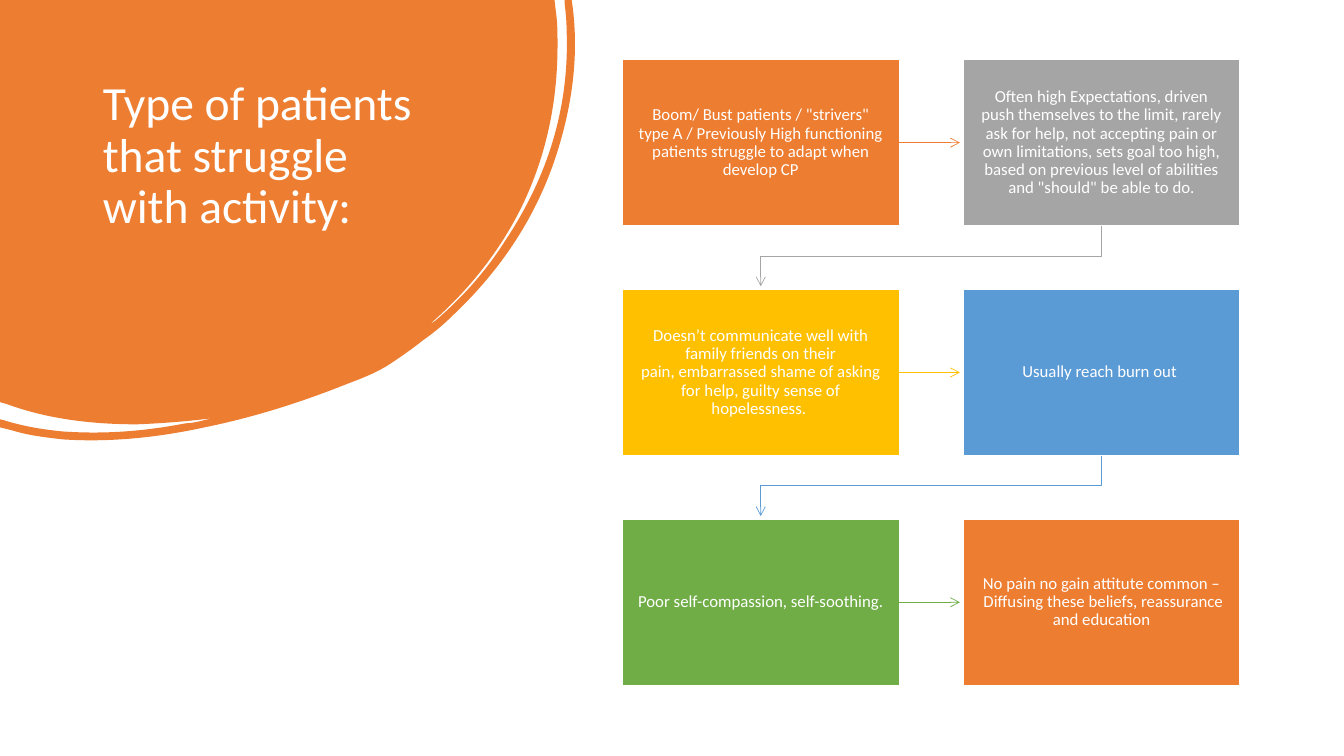
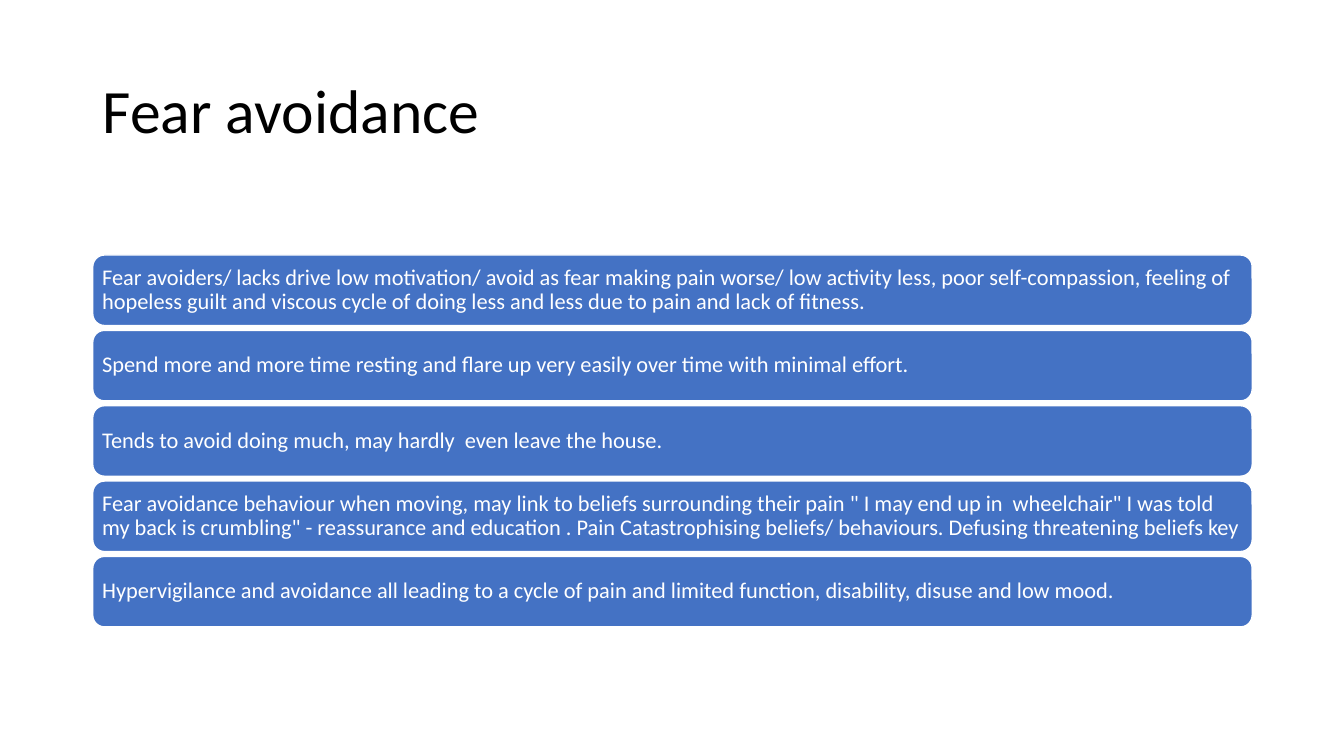
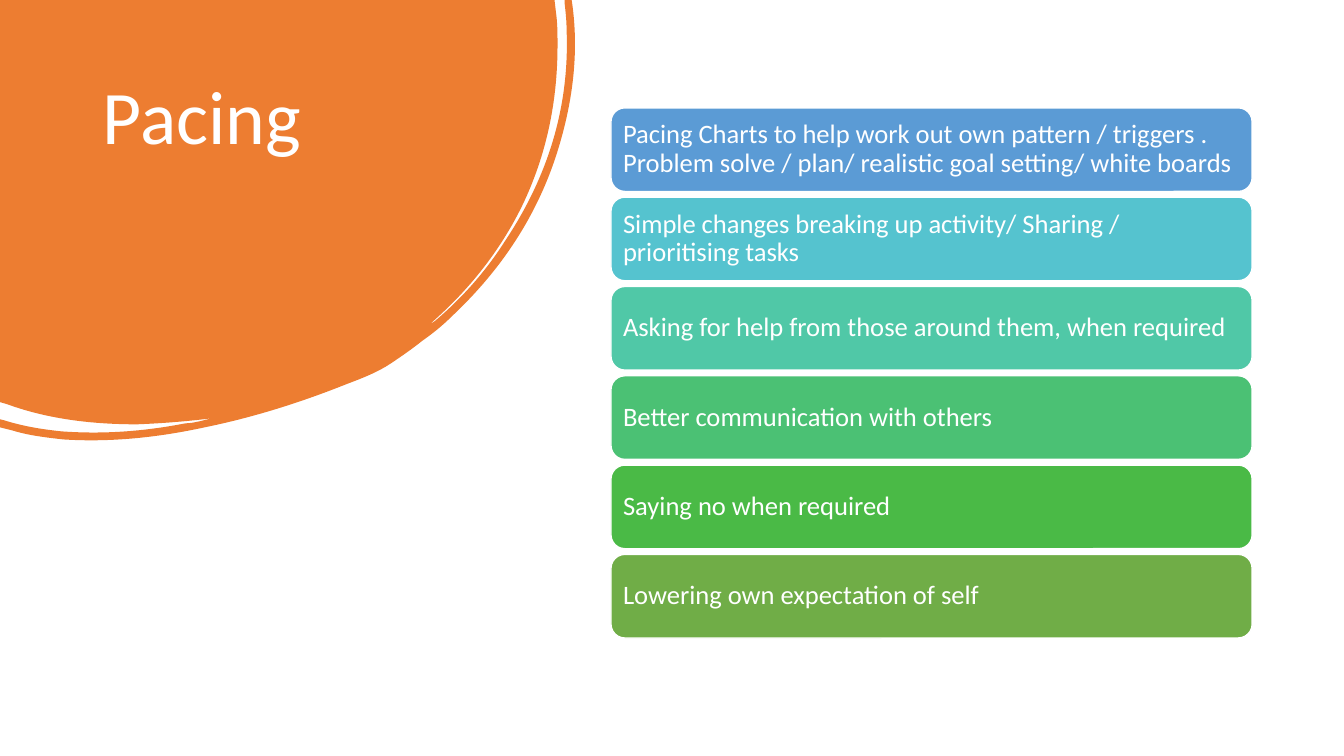
import pptx
import pptx.dml.color
import pptx.enum.shapes
import pptx.enum.text
import pptx.oxml.ns
import pptx.util
from lxml import etree

Inches = pptx.util.Inches
Pt = pptx.util.Pt
RGBColor = pptx.dml.color.RGBColor
MSO_SHAPE = pptx.enum.shapes.MSO_SHAPE
MSO_CONNECTOR = pptx.enum.shapes.MSO_CONNECTOR
MSO_ANCHOR = pptx.enum.text.MSO_ANCHOR
PP_ALIGN = pptx.enum.text.PP_ALIGN
qn = pptx.oxml.ns.qn

FONT = "Calibri"
NBSP = chr(160)
WHITE = RGBColor(0xFF, 0xFF, 0xFF)
BLACK = RGBColor(0x00, 0x00, 0x00)
ORANGE = RGBColor(0xED, 0x7D, 0x31)
GREY = RGBColor(0xA5, 0xA5, 0xA5)
GOLD = RGBColor(0xFF, 0xC0, 0x00)
BLUE = RGBColor(0x5B, 0x9B, 0xD5)
GREEN = RGBColor(0x70, 0xAD, 0x47)
ROYAL = RGBColor(0x44, 0x72, 0xC4)
TURQUOISE = RGBColor(0x55, 0xC3, 0xCF)
TEAL = RGBColor(0x50, 0xC8, 0xA7)
EMERALD = RGBColor(0x4B, 0xC1, 0x74)
LEAF = RGBColor(0x4A, 0xBA, 0x46)

# Outline of the corner swoosh in inches: two numbers are a line's end,
# six numbers are a Bezier curve's two handles and end.
SWOOSH = [
    (5.5, 0), (5.52, 0.17),
    (5.53, 0.26, 5.53, 0.36, 5.53, 0.45), (5.53, 1.01, 5.42, 1.54, 5.18, 2.04),
    (4.96, 2.49, 4.65, 2.88, 4.27, 3.21), (4.29, 3.21, 4.3, 3.19, 4.32, 3.18),
    (4.59, 2.95, 4.82, 2.69, 5.01, 2.39), (5.43, 1.76, 5.65, 1.07, 5.62, 0.3),
    (5.62, 0.21, 5.61, 0.12, 5.6, 0.03),
    (5.6, 0), (5.67, 0), (5.68, 0.07),
    (5.74, 0.54, 5.68, 1.02, 5.53, 1.5), (5.33, 2.14, 4.97, 2.68, 4.48, 3.14),
    (4.39, 3.23, 4.29, 3.31, 4.19, 3.38), (4.09, 3.46, 3.99, 3.53, 3.87, 3.61),
    (3.75, 3.69, 3.6, 3.75, 3.44, 3.81), (2.99, 3.99, 2.52, 4.14, 2.03, 4.24),
    (1.57, 4.34, 1.1, 4.39, 0.63, 4.36), (0.45, 4.34, 0.28, 4.32, 0.12, 4.27),
    (0, 4.24), (0, 4.16), (0.04, 4.17),
    (0.23, 4.23, 0.42, 4.26, 0.61, 4.28), (1.03, 4.31, 1.43, 4.28, 1.84, 4.2),
    (1.89, 4.2, 1.93, 4.19, 1.98, 4.18), (2.02, 4.17, 2.06, 4.16, 2.1, 4.15),
    (1.86, 4.18, 1.61, 4.2, 1.36, 4.21), (0.92, 4.21, 0.48, 4.16, 0.07, 4.01),
    (0, 3.99),
]
SWOOSH_SIZE = (5.71, 4.37)

TITLE_BOX = (0.92, 0.4, 11.5, 1.45)
SWOOSH_TITLE_BOX = (0.92, 0.74, 3.52, 2.22)

STRUGGLES = [
    ("Boom/ Bust patients / \"strivers\" type A / Previously High functioning "
     "patients struggle to adapt when develop CP", ORANGE),
    ("Often high Expectations, driven push themselves to the limit, rarely ask "
     "for help, not accepting pain or own limitations, sets goal too high, based "
     "on previous level of abilities and \"should\" be able to do.", GREY),
    (f"Doesn’t communicate well with family friends on their pain,{NBSP}embarrassed "
     f"shame of asking for help, guilty sense of hopelessness.{NBSP}", GOLD),
    (f"Usually reach burn out{NBSP}", BLUE),
    ("Poor self-compassion, self-soothing.", GREEN),
    (f"No pain no gain attitute common –{NBSP}Diffusing these beliefs, reassurance "
     "and education", ORANGE),
]
AVOIDANCE = [
    "Fear avoiders/ lacks drive low motivation/ avoid as fear making pain worse/ "
    "low activity less, poor self-compassion, feeling of hopeless guilt and "
    "viscous cycle of doing less and less due to pain and lack of fitness.",
    f"Spend more and more time resting and flare up{NBSP}very easily over time with "
    f"minimal{NBSP}effort.",
    f"Tends to avoid doing much, may hardly{NBSP} even leave the house.",
    "Fear avoidance behaviour when moving, may link to beliefs surrounding their "
    f"pain{NBSP}\" I may end up in{NBSP} wheelchair\" I was told my back "
    f"is{NBSP}crumbling\" - reassurance and education{NBSP}. Pain Catastrophising "
    "beliefs/ behaviours. Defusing threatening beliefs key",
    "Hypervigilance and avoidance all leading to a cycle of pain and "
    f"limited{NBSP}function, disability, disuse and low mood.",
]
PACING = [
    ("Pacing Charts to help work out own pattern / triggers . Problem solve / "
     "plan/ realistic goal setting/ white boards", BLUE),
    ("Simple changes breaking up activity/ Sharing / prioritising tasks", TURQUOISE),
    ("Asking for help from those around them, when required", TEAL),
    (f"Better communication with others{NBSP}", EMERALD),
    ("Saying no when required", LEAF),
    (f"Lowering own expectation of self{NBSP}", GREEN),
]


def set_text(frame, text, size, color, align, anchor):
    frame.text = text
    frame.word_wrap = True
    frame.auto_size = pptx.enum.text.MSO_AUTO_SIZE.NONE
    frame.vertical_anchor = anchor
    paragraph = frame.paragraphs[0]
    paragraph.alignment = align
    paragraph.line_spacing = 0.9
    font = paragraph.runs[0].font
    font.name, font.size, font.color.rgb = FONT, Pt(size), color


def add_panel(slide, preset, box, text, fill, size, align, inset):
    """Filled, white-edged shape with text."""
    panel = slide.shapes.add_shape(preset, *map(Inches, box))
    panel.shadow.inherit = False
    panel.fill.solid()
    panel.fill.fore_color.rgb = fill
    panel.line.color.rgb = WHITE
    panel.line.width = Pt(1)
    frame = panel.text_frame
    frame.margin_left = frame.margin_right = Inches(inset)
    frame.margin_top = frame.margin_bottom = Inches(inset)
    set_text(frame, text, size, WHITE, align, MSO_ANCHOR.MIDDLE)
    return panel


def add_titled_slide(deck, text, size, box=TITLE_BOX, color=BLACK,
                     anchor=MSO_ANCHOR.MIDDLE):
    slide = deck.slides.add_slide(deck.slide_layouts[5])
    title = slide.shapes.title
    title.left, title.top, title.width, title.height = map(Inches, box)
    set_text(title.text_frame, text, size, color, PP_ALIGN.LEFT, anchor)
    return slide


def bend_segments(outline, segments):
    """Turn the straight segments that have handles into Bezier curves."""
    outline.width, outline.height = map(Inches, SWOOSH_SIZE)
    path_element = next(outline.element.iter(qn("a:path")))
    path_element.set("w", str(outline.width))
    path_element.set("h", str(outline.height))
    for line, (*handles, _, _) in zip(path_element.findall(qn("a:lnTo")), segments):
        if handles:
            curve = etree.Element(qn("a:cubicBezTo"))
            for x, y in (handles[:2], handles[2:]):
                etree.SubElement(curve, qn("a:pt"), x=str(Inches(x)), y=str(Inches(y)))
            curve.append(line[0])
            path_element.replace(line, curve)


def add_swoosh_slide(deck, text, size):
    slide = add_titled_slide(deck, text, size, SWOOSH_TITLE_BOX, WHITE, MSO_ANCHOR.TOP)
    builder = slide.shapes.build_freeform(0, 0)
    builder.add_line_segments([(Inches(x), Inches(y)) for *_, x, y in SWOOSH], close=True)
    swoosh = builder.convert_to_shape()
    bend_segments(swoosh, SWOOSH)
    swoosh.shadow.inherit = False
    swoosh.fill.solid()
    swoosh.fill.fore_color.rgb = ORANGE
    swoosh.line.fill.background()
    slide.shapes.title.element.addprevious(swoosh.element)
    return slide


def add_arrow(slide, kind, ends, color):
    arrow = slide.shapes.add_connector(kind, *map(Inches, ends))
    arrow.line.color.rgb = color
    arrow.line.width = Pt(0.5)
    line = arrow.element.spPr.find(qn("a:ln"))
    etree.SubElement(line, qn("a:tailEnd"), type="arrow")
    etree.SubElement(arrow.element.spPr, qn("a:effectLst"))
    return arrow


def add_down_elbow(slide, start, end, color):
    """Elbow that leaves downwards: a sideways one turned by 90 degrees."""
    (x1, y1), (x2, y2) = start, end
    mid_x, mid_y = (x1 + x2) / 2, (y1 + y2) / 2
    half_drop, half_run = (y2 - y1) / 2, (x1 - x2) / 2
    elbow = add_arrow(slide, MSO_CONNECTOR.ELBOW,
                      (mid_x - half_drop, mid_y - half_run,
                       mid_x + half_drop, mid_y + half_run), color)
    elbow.element.spPr.find(qn("a:xfrm")).set("rot", "5400000")


def add_snake_flow(slide, box, steps, columns=2, panel_w=2.75, panel_h=1.65):
    left, top, width, height = box
    rows = len(steps) // columns
    step_x = (width - panel_w) / (columns - 1)
    step_y = (height - panel_h) / (rows - 1)
    tip_gap = 0.03
    for i, (text, color) in enumerate(steps):
        row, column = divmod(i, columns)
        x, y = left + column * step_x, top + row * step_y
        panel = add_panel(slide, MSO_SHAPE.RECTANGLE, (x, y, panel_w, panel_h),
                          text, color, 12, PP_ALIGN.CENTER, 0.14)
        if column < columns - 1:
            middle = y + panel_h / 2
            arrow = add_arrow(slide, MSO_CONNECTOR.STRAIGHT,
                              (x + panel_w, middle, x + step_x - tip_gap, middle), color)
            arrow.begin_connect(panel, 3)
        elif row < rows - 1:
            add_down_elbow(slide, (x + panel_w / 2, y + panel_h),
                           (left + panel_w / 2, y + step_y - tip_gap), color)


def add_bars(slide, box, bars, bar_h, size, inset):
    left, top, width, height = box
    step = (height - bar_h) / (len(bars) - 1)
    for i, (text, color) in enumerate(bars):
        add_panel(slide, MSO_SHAPE.ROUNDED_RECTANGLE, (left, top + i * step, width, bar_h),
                  text, color, size, PP_ALIGN.LEFT, inset)


def main():
    deck = pptx.Presentation()
    deck.slide_width, deck.slide_height = Inches(13.33), Inches(7.5)

    struggles = add_swoosh_slide(deck, "Type of patients that struggle with activity:", 34)
    add_snake_flow(struggles, (6.17, 0.59, 6.13, 6.21), STRUGGLES)

    avoidance = add_titled_slide(deck, "Fear avoidance", 44)
    add_bars(avoidance, (0.92, 2.53, 11.5, 3.69), [(text, ROYAL) for text in AVOIDANCE],
             0.7, 16, 0.06)

    pacing = add_swoosh_slide(deck, "Pacing", 54)
    add_bars(pacing, (6.06, 1.07, 6.36, 5.26), PACING, 0.83, 19, 0.08)

    deck.save("out.pptx")


if __name__ == "__main__":
    main()
